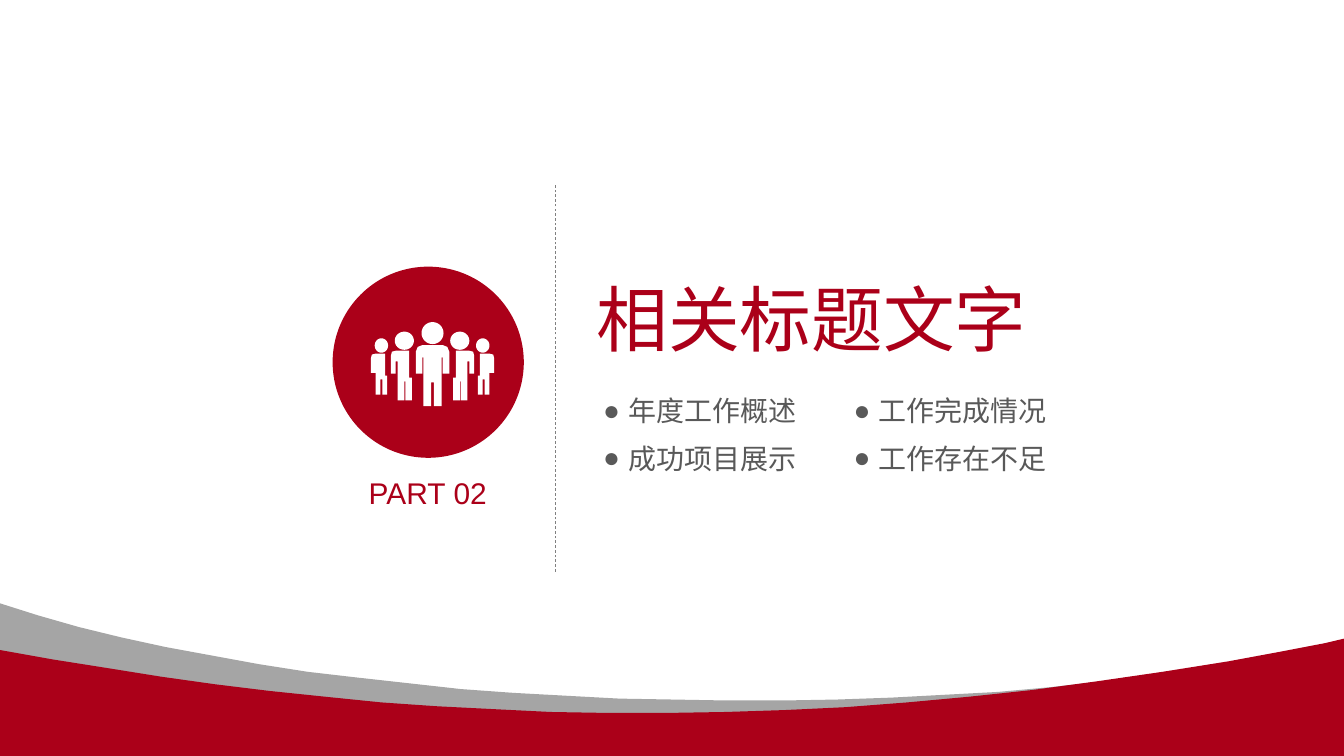
import math
from dataclasses import dataclass

import lxml.etree
import pptx
import pptx.dml.color
import pptx.enum.dml
import pptx.enum.shapes
import pptx.enum.text
import pptx.oxml.ns
import pptx.shapes.autoshape
import pptx.slide
import pptx.text.text
import pptx.util

Inches = pptx.util.Inches
RGBColor = pptx.dml.color.RGBColor
Point = tuple[float, float]

RED = RGBColor(0xAB, 0x00, 0x19)
GRAY = RGBColor(0xA5, 0xA5, 0xA5)
LINE_GRAY = RGBColor(0x80, 0x80, 0x80)
TEXT_GRAY = RGBColor(0x59, 0x59, 0x59)
WHITE = RGBColor(0xFF, 0xFF, 0xFF)

FONT = "Arial"
SLIDE_WIDTH, SLIDE_HEIGHT = 14.06, 7.91
WAVE_LEFT, WAVE_RIGHT = -0.01, 14.07
ICON_AXIS = 4.525
HEAD_AXIS = 4.52
HEAD_CORNERS = 32
BULLET_INDENT = 0.26


@dataclass
class Box:
    left: float
    top: float
    width: float
    height: float

    def lengths(self) -> list[pptx.util.Length]:
        return [Inches(value) for value in (self.left, self.top, self.width, self.height)]

    def round_outline(self) -> list[Point]:
        angles = [math.tau * step / HEAD_CORNERS for step in range(HEAD_CORNERS)]
        return [(self.left + self.width * (1 + math.cos(angle)) / 2,
                 self.top + self.height * (1 + math.sin(angle)) / 2) for angle in angles]


@dataclass
class Label:
    text: str
    box: Box
    size: float
    color: RGBColor
    inset: float = 0
    wrap: bool = True
    centered: bool = False
    bullet: bool = False


@dataclass
class Person:
    head: Box
    body: list[Point]

    def outlines(self) -> list[list[Point]]:
        return [self.head.round_outline(), self.body]

    def mirrored_outlines(self) -> list[list[Point]]:
        return [mirror(self.head.round_outline(), HEAD_AXIS), mirror(self.body, ICON_AXIS)]


def mirror(points: list[Point], axis: float) -> list[Point]:
    return [(2 * axis - x, y) for x, y in reversed(points)]


# Waves: upper edges, left to right
GRAY_EDGE: list[Point] = [
    (WAVE_LEFT, 6.31), (0.4, 6.44), (0.82, 6.56), (1.27, 6.67), (1.73, 6.77), (2.22, 6.86),
    (2.71, 6.95), (3.22, 7.03), (3.74, 7.09), (4.28, 7.15), (4.82, 7.21), (5.37, 7.25),
    (5.92, 7.28), (6.48, 7.31), (7.05, 7.32), (7.61, 7.33), (8.18, 7.33), (8.75, 7.32),
    (9.32, 7.3), (9.88, 7.27), (10.44, 7.24), (10.99, 7.19), (11.53, 7.13), (12.06, 7.07),
    (12.58, 7), (13.09, 6.92), (13.59, 6.83), (WAVE_RIGHT, 6.73),
]
RED_EDGE: list[Point] = [
    (WAVE_LEFT, 6.8), (0.55, 6.9), (1.12, 6.99), (1.68, 7.08), (2.25, 7.16), (2.82, 7.23),
    (3.4, 7.29), (3.99, 7.35), (4.57, 7.39), (5.16, 7.42), (5.76, 7.45), (6.36, 7.46),
    (6.97, 7.46), (7.59, 7.45), (8.21, 7.43), (8.84, 7.4), (9.49, 7.35), (10.14, 7.29),
    (10.8, 7.22), (11.47, 7.13), (12.16, 7.03), (12.85, 6.92), (13.39, 6.82),
    (13.86, 6.73), (WAVE_RIGHT, 6.68),
]

# Team icon: the leader is symmetric, the others stand in mirrored pairs
LEADER_HALF: list[Point] = [
    (4.51, 4), (4.51, 4.25), (4.43, 4.25), (4.43, 3.74), (4.42, 3.74), (4.42, 3.91),
    (4.35, 3.91), (4.35, 3.68), (4.37, 3.63), (4.42, 3.61),
]
LEADER = Person(Box(4.41, 3.37, 0.23, 0.23), LEADER_HALF + mirror(LEADER_HALF, ICON_AXIS))
INNER = Person(Box(4.13, 3.47, 0.2, 0.19), [
    (4.31, 3.95), (4.31, 4.19), (4.24, 4.19), (4.24, 3.99), (4.23, 3.99), (4.23, 4.19),
    (4.16, 4.19), (4.16, 3.78), (4.14, 3.78), (4.14, 3.91), (4.09, 3.91), (4.09, 3.72),
    (4.1, 3.68), (4.14, 3.67), (4.28, 3.67), (4.28, 3.95),
])
OUTER = Person(Box(3.92, 3.54, 0.14, 0.15), [
    (4.05, 3.93), (4.05, 4.13), (4, 4.13), (4, 3.97), (3.98, 3.97), (3.98, 4.13),
    (3.93, 4.13), (3.93, 3.9), (3.88, 3.9), (3.88, 3.75), (3.89, 3.71), (3.93, 3.7),
    (4.03, 3.7), (4.03, 3.93),
])
TEAM = LEADER.outlines()
for member in (INNER, OUTER):
    TEAM += member.outlines() + member.mirrored_outlines()

# Texts
TOPICS = [["年度工作概述", "工作完成情况"], ["成功项目展示", "工作存在不足"]]
LABELS = [
    Label("相关标题文字", Box(6.14, 2.83, 4.75, 1.01), 54, RED, inset=0.1, wrap=False),
    Label("PART 02", Box(3.78, 4.97, 1.39, 0.38), 22.5, RED, centered=True),
] + [
    Label(topic, Box(6.31 + 2.62 * column, 4.12 + 0.5 * row, 2.12, 0.35), 21.1, TEXT_GRAY,
          bullet=True)
    for row, topics in enumerate(TOPICS)
    for column, topic in enumerate(topics)
]


def paint(shape: pptx.shapes.autoshape.Shape, color: RGBColor) -> None:
    shape.shadow.inherit = False
    shape.fill.solid()
    shape.fill.fore_color.rgb = color
    shape.line.fill.background()


def add_outlines(slide: pptx.slide.Slide, outlines: list[list[Point]], color: RGBColor) -> None:
    contours = [[(Inches(x), Inches(y)) for x, y in outline] for outline in outlines]
    builder = slide.shapes.build_freeform(*contours[0][0])
    for index, (start, *others) in enumerate(contours):
        if index:
            builder.move_to(*start)
        builder.add_line_segments(others, close=True)
    paint(builder.convert_to_shape(), color)


def add_wave(slide: pptx.slide.Slide, edge: list[Point], color: RGBColor) -> None:
    corners = [(WAVE_RIGHT, SLIDE_HEIGHT), (WAVE_LEFT, SLIDE_HEIGHT)]
    add_outlines(slide, [edge + corners], color)


def add_bullet(paragraph: pptx.text.text._Paragraph) -> None:
    properties = paragraph._p.get_or_add_pPr()
    properties.set("marL", str(Inches(BULLET_INDENT)))
    properties.set("indent", str(-Inches(BULLET_INDENT)))
    for tag, name, value in (("a:buFont", "typeface", FONT), ("a:buChar", "char", "●")):
        lxml.etree.SubElement(properties, pptx.oxml.ns.qn(tag)).set(name, value)


def add_label(slide: pptx.slide.Slide, label: Label) -> None:
    frame = slide.shapes.add_textbox(*label.box.lengths()).text_frame
    frame.word_wrap = label.wrap
    frame.auto_size = pptx.enum.text.MSO_AUTO_SIZE.SHAPE_TO_FIT_TEXT
    frame.margin_left = frame.margin_right = Inches(label.inset)
    frame.margin_top = frame.margin_bottom = Inches(label.inset / 2)
    paragraph = frame.paragraphs[0]
    paragraph.text = label.text
    paragraph.font.name = FONT
    paragraph.font.size = pptx.util.Pt(label.size)
    paragraph.font.color.rgb = label.color
    if label.centered:
        paragraph.alignment = pptx.enum.text.PP_ALIGN.CENTER
    if label.bullet:
        add_bullet(paragraph)


def add_divider(slide: pptx.slide.Slide, x: float, start: float, end: float) -> None:
    divider = slide.shapes.add_connector(
        pptx.enum.shapes.MSO_CONNECTOR.STRAIGHT, Inches(x), Inches(start), Inches(x), Inches(end))
    divider.line.color.rgb = LINE_GRAY
    divider.line.width = pptx.util.Pt(0.5)
    divider.line.dash_style = pptx.enum.dml.MSO_LINE.DASH
    lxml.etree.SubElement(divider._element.spPr, pptx.oxml.ns.qn("a:effectLst"))


def main() -> None:
    presentation = pptx.Presentation()
    presentation.slide_width = Inches(SLIDE_WIDTH)
    presentation.slide_height = Inches(SLIDE_HEIGHT)
    slide = presentation.slides.add_slide(presentation.slide_layouts[6])

    add_divider(slide, 5.81, 5.98, 1.92)
    for label in LABELS:
        add_label(slide, label)
    oval = pptx.enum.shapes.MSO_SHAPE.OVAL
    paint(slide.shapes.add_shape(oval, *Box(3.48, 2.79, 2, 2).lengths()), RED)
    add_outlines(slide, TEAM, WHITE)
    add_wave(slide, GRAY_EDGE, GRAY)
    add_wave(slide, RED_EDGE, RED)
    presentation.save("out.pptx")


if __name__ == "__main__":
    main()
